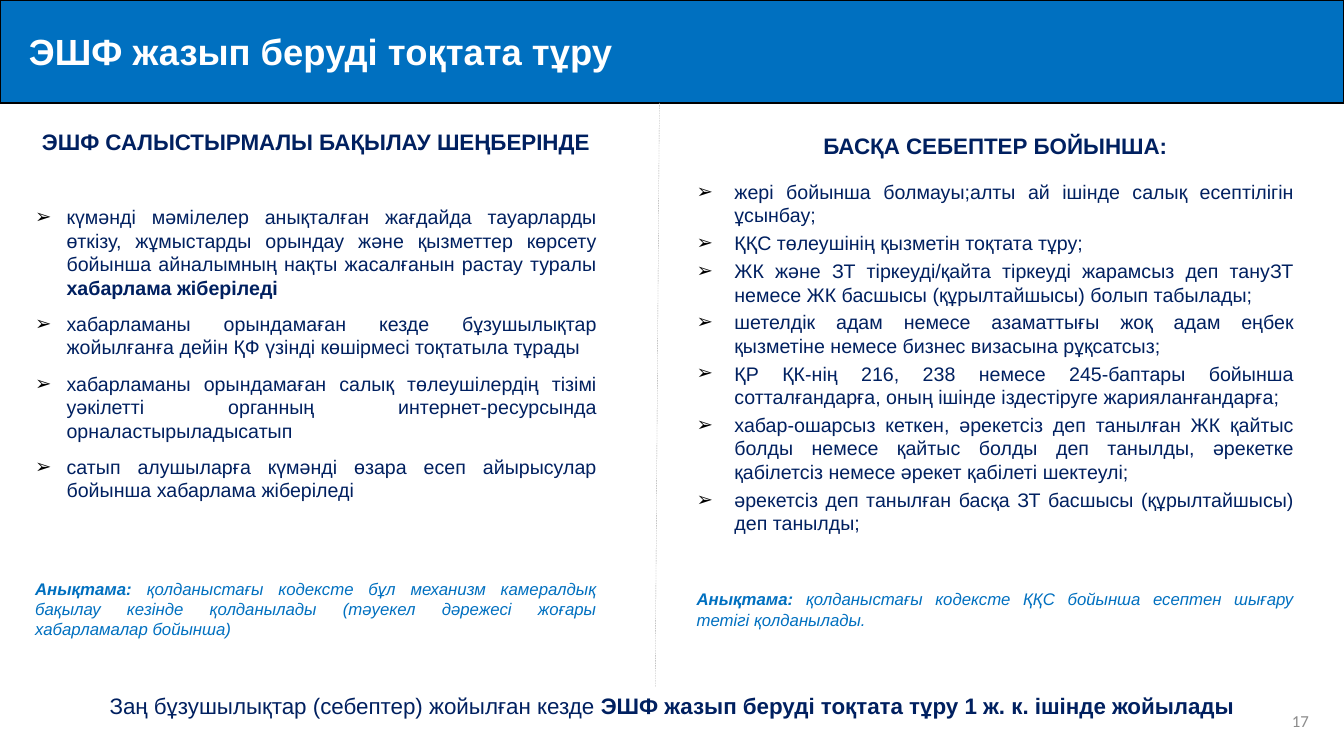
import pptx
import pptx.dml.color
import pptx.enum.dml
import pptx.enum.shapes
import pptx.enum.text
import pptx.oxml.ns
import pptx.util
from lxml import etree

PX = 9525
COLORS = {
    "blue": "0070C0",
    "navy": "002060",
    "white": "FFFFFF",
    "black": "000000",
    "divider": "A6A6A6",
    "number": "8C8C8C",
}
ALIGN = pptx.enum.text.PP_ALIGN

LEFT_BULLETS = [
    ["күмәнді мәмілелер анықталған жағдайда тауарларды өткізу, жұмыстарды орындау және "
     "қызметтер көрсету бойынша айналымның нақты жасалғанын растау туралы ",
     "хабарлама жіберіледі"],
    ["хабарламаны орындамаған кезде бұзушылықтар жойылғанға дейін ҚФ үзінді көшірмесі "
     "тоқтатыла тұрады"],
    ["хабарламаны орындамаған салық төлеушілердің тізімі уәкілетті органның "
     "интернет-ресурсында орналастырыладысатып"],
    ["сатып алушыларға күмәнді өзара есеп айырысулар бойынша хабарлама жіберіледі"],
]
RIGHT_BULLETS = [
    ["жері бойынша болмауы;алты ай ішінде салық есептілігін ұсынбау;"],
    ["ҚҚС төлеушінің қызметін тоқтата тұру;"],
    ["ЖК және ЗТ тіркеуді/қайта тіркеуді жарамсыз деп тануЗТ немесе ЖК басшысы "
     "(құрылтайшысы) болып табылады;"],
    ["шетелдік адам немесе азаматтығы жоқ адам еңбек қызметіне немесе бизнес визасына "
     "рұқсатсыз;"],
    ["ҚР ҚК-нің 216, 238 немесе 245-баптары бойынша сотталғандарға, оның ішінде "
     "іздестіруге жарияланғандарға;"],
    ["хабар-ошарсыз кеткен, әрекетсіз деп танылған ЖК қайтыс болды немесе қайтыс болды "
     "деп танылды, әрекетке қабілетсіз немесе әрекет қабілеті шектеулі;"],
    ["әрекетсіз деп танылған басқа ЗТ басшысы (құрылтайшысы) деп танылды;"],
]
LEFT_NOTE = ("қолданыстағы кодексте бұл механизм камералдық бақылау кезінде қолданылады "
             "(тәуекел дәрежесі жоғары хабарламалар бойынша)")
RIGHT_NOTE = "қолданыстағы кодексте ҚҚС бойынша есептен шығару тетігі қолданылады."


def rgb(name):
    return pptx.dml.color.RGBColor.from_string(COLORS[name])


class SlideBuilder:
    def __init__(self, page, font="Arial"):
        self.page = page
        self.font = font

    def fill_para(self, para, spans, size, color="navy", bold=(False,), italic=False,
                  align=ALIGN.LEFT, before=0, margin=0, indent=0, font=None):
        """Add formatted spans to a paragraph; bold holds one flag per span."""
        para.alignment = align
        para.space_before = pptx.util.Pt(before)
        properties = para._p.get_or_add_pPr()
        properties.set("marL", str(margin * PX))
        properties.set("indent", str(indent * PX))
        for text, is_bold in zip(spans, bold):
            span = para.add_run()
            span.text = text
            span.font.name = font or self.font
            span.font.size = pptx.util.Pt(size)
            span.font.bold = is_bold
            span.font.italic = italic
            span.font.color.rgb = rgb(color)

    def bullet(self, para):
        properties = para._p.get_or_add_pPr()
        qn = pptx.oxml.ns.qn
        tint = etree.SubElement(properties, qn("a:buClr"))
        etree.SubElement(tint, qn("a:srgbClr"), val=COLORS["black"])
        etree.SubElement(properties, qn("a:buFont"), typeface=self.font)
        etree.SubElement(properties, qn("a:buChar"), char="➢")

    def title(self, text, left, top, width, height):
        bar = self.page.shapes.title
        bar.left, bar.top, bar.width, bar.height = (n * PX for n in (left, top, width, height))
        bar.fill.solid()
        bar.fill.fore_color.rgb = rgb("blue")
        bar.line.color.rgb = rgb("black")
        bar.line.width = pptx.util.Pt(1)
        frame = bar.text_frame
        frame.auto_size = pptx.enum.text.MSO_AUTO_SIZE.NONE
        frame.vertical_anchor = pptx.enum.text.MSO_ANCHOR.MIDDLE
        self.fill_para(frame.paragraphs[0], [text], 26, "white", [True], margin=18)

    def box(self, left, top, width, height, anchor=pptx.enum.text.MSO_ANCHOR.TOP):
        box = self.page.shapes.add_textbox(left * PX, top * PX, width * PX, height * PX)
        box.text_frame.word_wrap = True
        box.text_frame.vertical_anchor = anchor
        return box.text_frame

    def column(self, place, heading, bullets, note, margin, hang, gaps):
        """Heading, bullets and note; gaps: before first bullet, others, note."""
        first_gap, bullet_gap, note_gap = gaps
        frame = self.box(*place)
        self.fill_para(frame.paragraphs[0], [heading], 16, bold=[True],
                       align=ALIGN.CENTER, margin=margin)
        for index, spans in enumerate(bullets):
            para = frame.add_paragraph()
            self.bullet(para)
            self.fill_para(para, spans, 14, bold=[False, True], align=ALIGN.JUSTIFY,
                           before=bullet_gap if index else first_gap,
                           margin=margin + hang, indent=-hang)
        self.fill_para(frame.add_paragraph(), ["Анықтама: ", note], 12, "blue",
                       [True, False], italic=True, align=ALIGN.JUSTIFY,
                       before=note_gap, margin=margin)

    def divider(self, *ends):
        line = self.page.shapes.add_connector(
            pptx.enum.shapes.MSO_CONNECTOR.STRAIGHT, *(n * PX for n in ends))
        line.line.color.rgb = rgb("divider")
        line.line.width = pptx.util.Pt(0.25)
        line.line.dash_style = pptx.enum.dml.MSO_LINE.DASH
        etree.SubElement(line._element.spPr, pptx.oxml.ns.qn("a:effectLst"))


def main():
    deck = pptx.Presentation()
    deck.slide_width, deck.slide_height = 1280 * PX, 720 * PX
    slide = SlideBuilder(deck.slides.add_slide(deck.slide_layouts.get_by_name("Title Only")))

    slide.title("ЭШФ жазып беруді тоқтата тұру", 0, 0, 1280, 98)
    number = slide.box(968, 667, 288, 38, pptx.enum.text.MSO_ANCHOR.MIDDLE)
    slide.fill_para(number.paragraphs[0], ["17"], 12, "number", align=ALIGN.RIGHT,
                    font="Calibri")
    slide.column((624, 121, 618, 491), "БАСҚА СЕБЕПТЕР БОЙЫНША:", RIGHT_BULLETS, RIGHT_NOTE,
                 margin=30, hang=36, gaps=(15, 3, 39))
    slide.divider(624, 654, 628, 98)
    slide.column((24, 117, 554, 504), "ЭШФ САЛЫСТЫРМАЛЫ БАҚЫЛАУ ШЕҢБЕРІНДЕ", LEFT_BULLETS,
                 LEFT_NOTE, margin=0, hang=30, gaps=(36, 9, 55))
    summary = slide.box(60, 654, 1160, 36)
    slide.fill_para(summary.paragraphs[0],
                    ["Заң бұзушылықтар (себептер) жойылған кезде ",
                     "ЭШФ жазып беруді тоқтата тұру 1 ж. к. ішінде жойылады"],
                    16, bold=[False, True], align=ALIGN.CENTER)
    deck.save("out.pptx")


if __name__ == "__main__":
    main()
